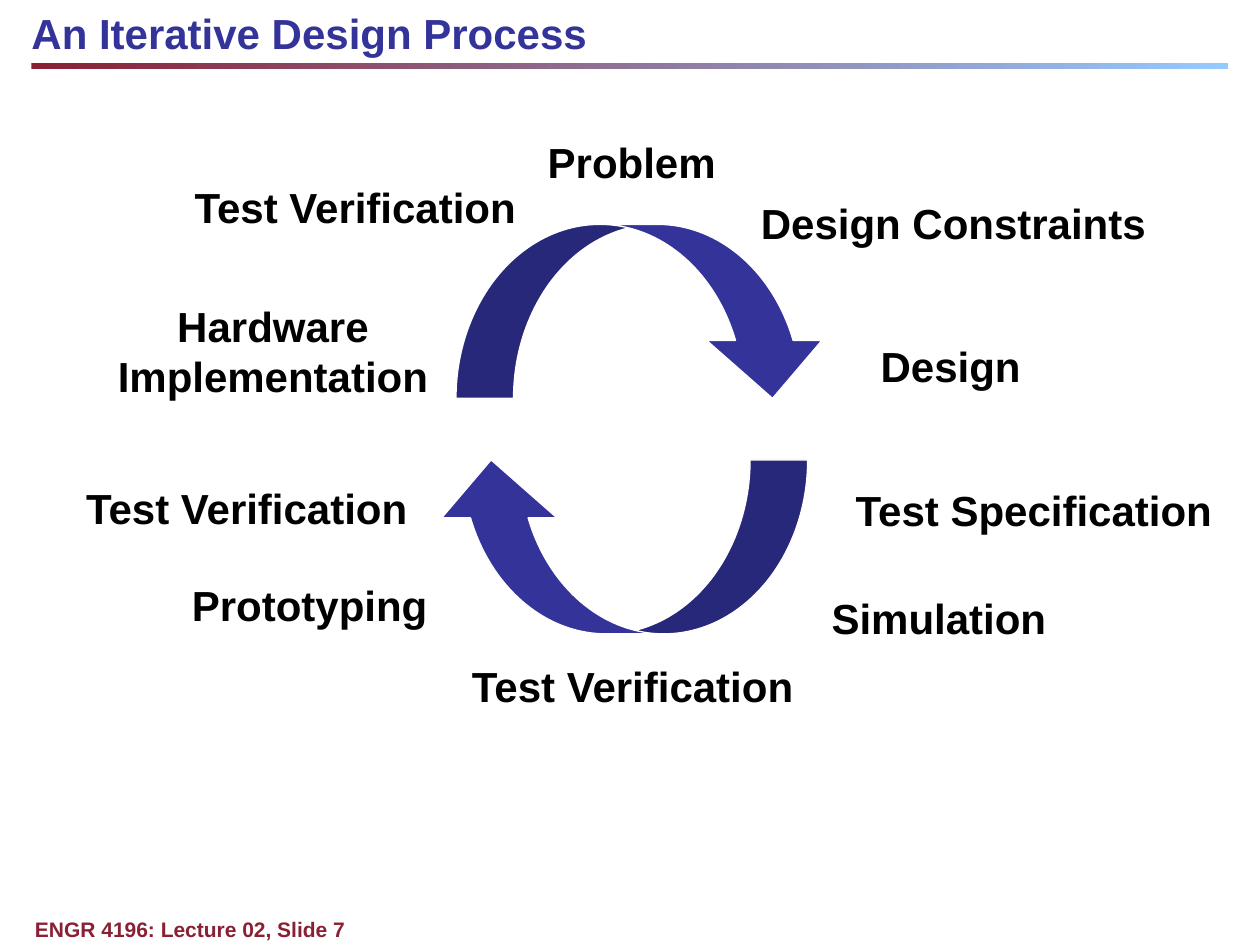
from pptx import Presentation
from pptx.dml.color import RGBColor
from pptx.enum.shapes import MSO_SHAPE
from pptx.enum.text import MSO_AUTO_SIZE, PP_ALIGN
from pptx.util import Pt

COLORS = {
    "title": "333399",
    "footer": "892034",
    "label": "000000",
    "arrow": "333399",
    "outline": "FFFFFF",
    "rule_start": "892034",
    "rule_end": "95CAFF",
}


def color(name):
    return RGBColor.from_string(COLORS[name])


def add_text(text, left, top, width, height, size, color_name, align=PP_ALIGN.LEFT):
    box = slide.shapes.add_textbox(Pt(left), Pt(top), Pt(width), Pt(height))
    frame = box.text_frame
    frame.word_wrap = True
    frame.auto_size = MSO_AUTO_SIZE.SHAPE_TO_FIT_TEXT
    frame.margin_left = frame.margin_right = frame.margin_top = 0
    frame.margin_bottom = Pt(3.6) if color_name == "label" else 0
    paragraph = frame.paragraphs[0]
    paragraph.alignment = align
    paragraph.line_spacing = Pt(1.2 * size)
    run = paragraph.add_run()
    run.text = text
    run.font.name = "Arial"
    run.font.size = Pt(size)
    run.font.bold = True
    run.font.color.rgb = color(color_name)


presentation = Presentation()
presentation.slide_width = Pt(720)
presentation.slide_height = Pt(540)
slide = presentation.slides.add_slide(presentation.slide_layouts[6])

# Title, rule and footer
rule = slide.shapes.add_shape(MSO_SHAPE.RECTANGLE, Pt(18), Pt(36), Pt(684), Pt(3.6))
rule.shadow.inherit = False
rule.line.fill.background()
rule.fill.gradient()
rule.fill.gradient_angle = 0
for stop, name in zip(rule.fill.gradient_stops, ("rule_start", "rule_end")):
    stop.color.rgb = color(name)

add_text("ENGR 4196: Lecture 02, Slide 7", 20, 523.5, 642, 14.4, 12, "footer")
add_text("An Iterative Design Process", 18, 4.5, 678, 28.8, 24, "title")

# Cycle of two curved arrows
cycle = slide.shapes.add_group_shape()
for left, top, rotation in ((260.6, 128.2, 0), (247.7, 262.8, 180)):
    arrow = cycle.shapes.add_shape(
        MSO_SHAPE.CURVED_DOWN_ARROW, Pt(left), Pt(top), Pt(213.8), Pt(99.4))
    arrow.rotation = rotation
    for index, value in enumerate((0.331, 0.662, 0.333)):
        arrow.adjustments[index] = value
    arrow.shadow.inherit = False
    arrow.fill.solid()
    arrow.fill.fore_color.rgb = color("arrow")
    arrow.line.color.rgb = color("outline")
    arrow.line.width = Pt(0.75)

# Steps, clockwise from the top: text, left, top, width, lines
steps = [
    ("Problem", 296, 78, 130, 1),
    ("Design Constraints", 433.5, 113, 222.5, 1),
    ("Design", 489, 194.5, 108.5, 1),
    ("Test Specification", 484.5, 277, 212.5, 1),
    ("Simulation", 458.5, 338.5, 156, 1),
    ("Test Verification", 253.5, 377.5, 216, 1),
    ("Prototyping", 69, 331, 216, 1),
    ("Test Verification", 33, 275.5, 216, 1),
    ("Hardware Implementation", 48, 171.5, 216, 2),
    ("Test Verification", 95, 103.5, 216, 1),
]
for text, left, top, width, lines in steps:
    add_text(text, left, top, width, 28.8 * lines + 3.6, 24, "label", PP_ALIGN.CENTER)

presentation.save("out.pptx")
